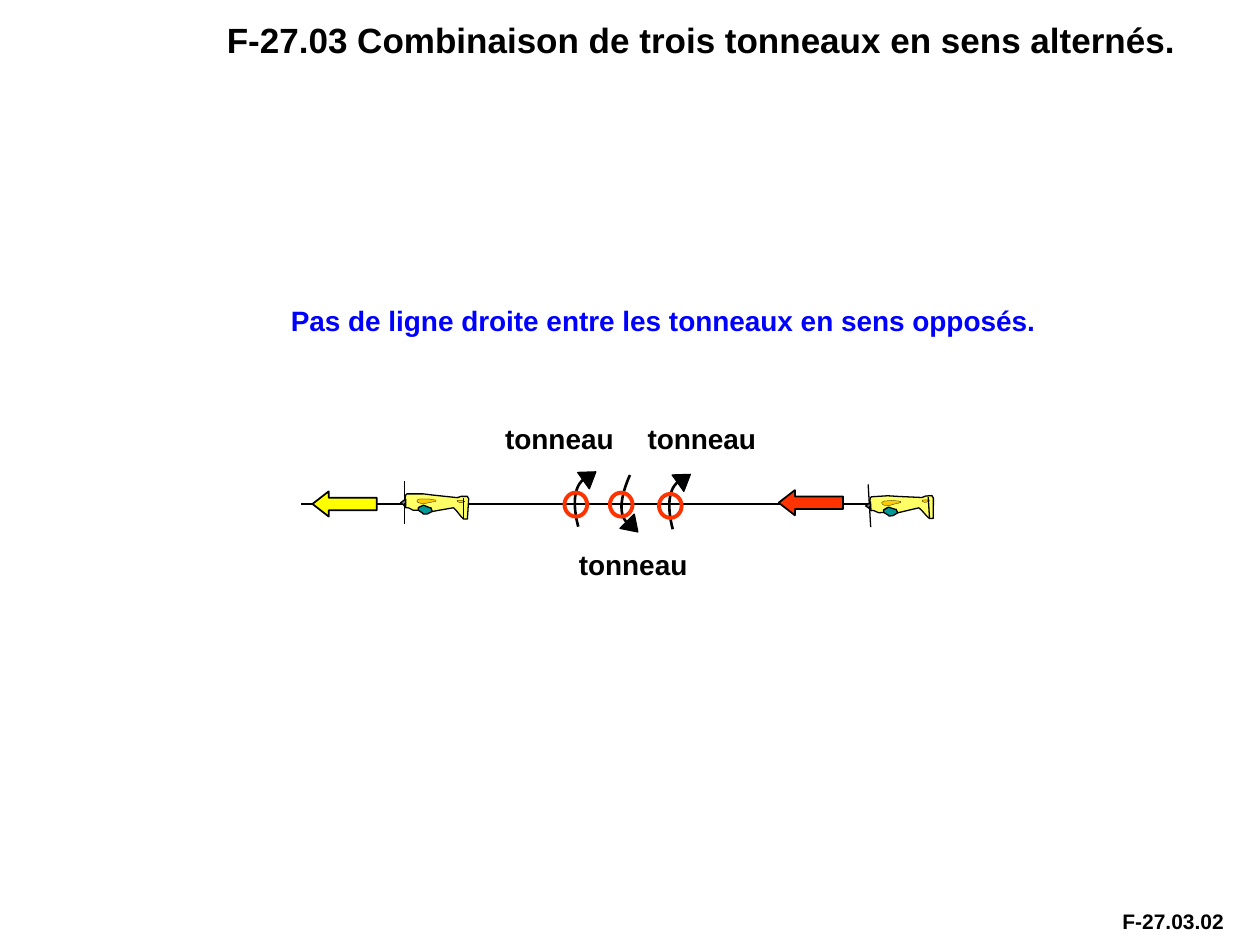
from pptx import Presentation
from pptx.dml.color import RGBColor
from pptx.enum.shapes import MSO_CONNECTOR, MSO_SHAPE as SHAPE
from pptx.enum.text import MSO_ANCHOR, MSO_AUTO_SIZE, PP_ALIGN
from pptx.oxml.ns import qn
from pptx.util import Inches, Pt

COLORS = {
    "black": "000000", "blue": "0000FF", "red": "FF3300", "yellow": "FFFF00",
    "body": "FFFF66", "wing": "009999", "trim": "FFCC00", "nose": "808080",
}

TITLE = "F-27.03 Combinaison de trois tonneaux en sens alternés."
NOTE = "Pas de ligne droite entre les tonneaux en sens opposés."
CODE = "F-27.03.02"

# Label boxes, left, top, width
ROLL_LABELS = [
    ("tonneau", 3.87, 3.3, 1.14),
    ("tonneau", 5, 3.3, 1.14),
    ("tonneau", 4.39, 4.3, 1.27),
]
FLIGHT_PATH = ((7.12, 4), (2.39, 4))
DIRECTION_ARROWS = [("red", 6.18, 3.89), ("yellow", 2.48, 3.9)]

# Bezier control points of each roll arrow, centre and turn of its head
UPWARD_ARC = [(4.59, 4.18), (4.54, 3.99), (4.56, 3.85), (4.64, 3.8)]
UPWARD_HEAD = (4.68, 3.78)
ROLL_STEP = (0.75, 0.02)
DOWNWARD_ARC = [(5, 3.77), (4.92, 3.95), (4.91, 4.09), (4.98, 4.15)]
DOWNWARD_HEAD = (5.02, 4.18)
ROLL_CIRCLES = [(4.48, 3.91), (4.84, 3.91), (5.23, 3.92)]

# Propeller hub and turn of each plane
PLANES = [(6.9, 4, -3.4), (3.21, 3.99, 0)]
# Plane parts in hundredths of an inch from the hub: fill, line width, outline
PLANE_PARTS = [
    ("body", 0.75, [
        (11, 6), (7, 6), (3, 4), (1, 4), (0, 3), (0, -1), (1, -6), (2, -7),
        (6, -7), (15, -7), (23, -6), (42, -4), (45, -5), (50, -5), (51, -3),
        (50, 13), (47, 13), (45, 11), (41, 6), (40, 5), (39, 4), (22, 7),
        (21, 5), (15, 3), (13, 3), (12, 4)]),
    ("wing", 0.75, [
        (22, 7), (21, 4), (20, 4), (15, 2), (11, 4), (11, 6), (14, 8),
        (15, 9), (18, 9)]),
    ("trim", 0.13, [
        (25, -2), (25, -1), (19, 0), (15, 1), (11, 0), (10, -1), (10, -2),
        (12, -3), (15, -3), (19, -3)]),
    ("trim", 0.13, [
        (48, -1), (45, -2), (42, -2), (42, -1), (44, 0), (45, 0)]),
]
PLANE_LINES = [((0, -17), (0, -1)), ((47, -4), (47, 13)), ((0, 0), (0, 17))]


def rgb(name):
    return RGBColor.from_string(COLORS[name])


def style(s, fill=None, line="black", width=0.75):
    s.shadow.inherit = False
    if fill:
        s.fill.solid()
        s.fill.fore_color.rgb = rgb(fill)
    else:
        s.fill.background()
    s.line.color.rgb = rgb(line)
    s.line.width = Pt(width)


def add_preset(shapes, kind, x, y, w, h, rotation=0, **fmt):
    s = shapes.add_shape(kind, *map(Inches, (x, y, w, h)))
    s.rotation = rotation
    style(s, **fmt)
    return s


def add_line(shapes, start, end):
    s = shapes.add_connector(MSO_CONNECTOR.STRAIGHT, *map(Inches, start + end))
    s.line.color.rgb = rgb("black")
    s.line.width = Pt(0.75)
    s._element.spPr.append(s._element.spPr.makeelement(qn("a:effectLst"), {}))


def add_outline(shapes, points, close=True, **fmt):
    pts = [(Inches(x), Inches(y)) for x, y in points]
    builder = shapes.build_freeform(*pts[0])
    builder.add_line_segments(pts[1:], close=close)
    style(builder.convert_to_shape(), **fmt)


def add_triangle(shapes, center, w, h, rotation, fill):
    x, y = center
    add_preset(shapes, SHAPE.ISOSCELES_TRIANGLE, x - w / 2, y - h / 2, w, h,
               rotation, fill=fill)


def write(s, text, size=16, color="black", align=PP_ALIGN.LEFT):
    tf = s.text_frame
    tf.word_wrap = True
    tf.auto_size = MSO_AUTO_SIZE.SHAPE_TO_FIT_TEXT
    p = tf.paragraphs[0]
    p.alignment = align
    r = p.add_run()
    r.text = text
    r.font.name = "Arial"
    r.font.size = Pt(size)
    r.font.bold = True
    r.font.color.rgb = rgb(color)


def add_label(shapes, text, x, y, w, h=0.37, **fmt):
    write(shapes.add_textbox(*map(Inches, (x, y, w, h))), text, **fmt)


def add_title(s):
    s.left, s.top, s.width, s.height = map(Inches, (1.12, 0.11, 8.63, 0.42))
    tf = s.text_frame
    tf.margin_left = tf.margin_right = Inches(0.09)
    tf.margin_top = tf.margin_bottom = Inches(0.04)
    tf.vertical_anchor = MSO_ANCHOR.TOP
    write(s, TITLE, size=20)
    pPr = tf.paragraphs[0]._p.get_or_add_pPr()
    pPr.set("marL", str(Inches(0.59)))
    pPr.set("indent", "0")


def add_plane(shapes, hub_x, hub_y, rotation):
    def place(point):
        return hub_x + point[0] / 100, hub_y + point[1] / 100

    group = shapes.add_group_shape()
    parts = group.shapes
    for fill, width, points in PLANE_PARTS:
        add_outline(parts, map(place, points), fill=fill, width=width)
    add_triangle(parts, place((-1, 0)), 0.06, 0.04, 270, "nose")
    for start, end in PLANE_LINES:
        add_line(parts, place(start), place(end))
    group.rotation = rotation


def bezier(a, b, c, d, steps=16):
    """Points along a cubic curve."""
    def at(t):
        u = 1 - t
        weights = (u ** 3, 3 * u * u * t, 3 * u * t * t, t ** 3)
        return tuple(sum(k * v for k, v in zip(weights, axis))
                     for axis in zip(a, b, c, d))
    return [at(i / steps) for i in range(steps + 1)]


def add_roll_arrow(shapes, arc, head, rotation, shift=(0, 0)):
    def moved(point):
        return point[0] + shift[0], point[1] + shift[1]

    add_outline(shapes, bezier(*map(moved, arc)), close=False, width=1.5)
    add_triangle(shapes, moved(head), 0.16, 0.12, rotation, "black")


def main():
    prs = Presentation()
    prs.slide_width, prs.slide_height = Inches(10), Inches(7.5)
    slide = prs.slides.add_slide(prs.slide_layouts[5])
    shapes = slide.shapes

    add_title(shapes.title)
    add_line(shapes, *FLIGHT_PATH)
    for plane in PLANES:
        add_plane(shapes, *plane)
    for fill, x, y in DIRECTION_ARROWS:
        s = add_preset(shapes, SHAPE.LEFT_ARROW, x, y, 0.51, 0.2,
                       fill=fill, width=1)
        s.adjustments[1] = 0.645

    add_roll_arrow(shapes, DOWNWARD_ARC, DOWNWARD_HEAD, 135)
    for shift in ((0, 0), ROLL_STEP):
        add_roll_arrow(shapes, UPWARD_ARC, UPWARD_HEAD, 54.5, shift)
    for x, y in ROLL_CIRCLES:
        add_preset(shapes, SHAPE.OVAL, x, y, 0.18, 0.19, line="red", width=2.25)

    for label in ROLL_LABELS:
        add_label(shapes, *label, align=PP_ALIGN.CENTER)
    add_label(shapes, NOTE, 2.21, 2.36, 6.4, color="blue")
    add_label(shapes, CODE, 8.81, 7.16, 1.03, 0.3, size=12)
    prs.save("out.pptx")


if __name__ == "__main__":
    main()
